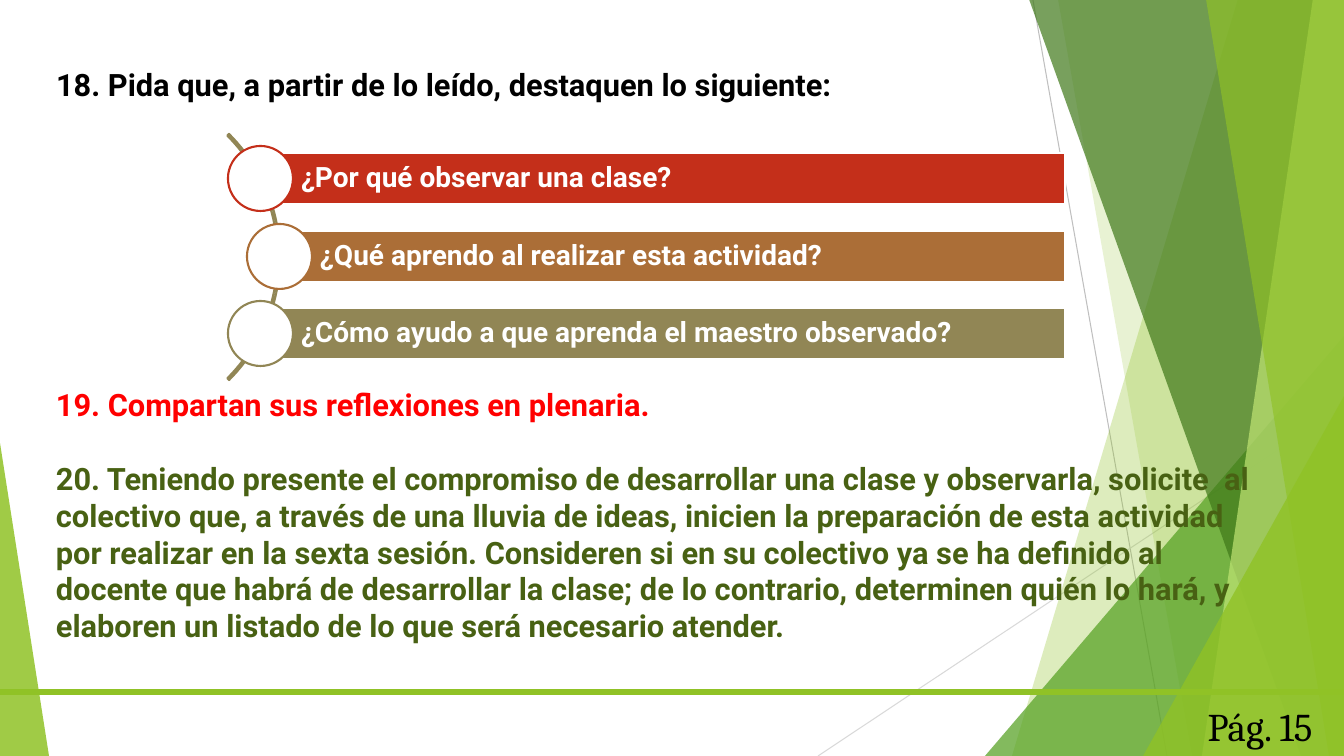
from dataclasses import dataclass
from typing import Optional

from lxml.etree import SubElement
from pptx import Presentation
from pptx.dml.color import RGBColor
from pptx.dml.fill import FillFormat
from pptx.enum.shapes import MSO_CONNECTOR, MSO_SHAPE
from pptx.enum.text import MSO_ANCHOR, MSO_AUTO_SIZE, PP_ALIGN
from pptx.oxml.ns import qn
from pptx.shapes.autoshape import Shape
from pptx.slide import Slide
from pptx.text.text import TextFrame, _Paragraph
from pptx.util import Pt

EMU_PER_PX = 914400 / 100.8
WIDTH, HEIGHT = 1344, 756
GREEN = "90C226"
WHITE = "FFFFFF"
BLACK = "000000"
OLIVE = "918655"


@dataclass
class Ray:
    start: tuple[int, int]
    end: tuple[int, int]
    color: str


@dataclass
class Facet:
    """A translucent band between a slanted left edge and the slide's right side."""
    top_x: int
    bottom_x: int
    color: str
    opacity: int


@dataclass
class Wedge:
    left: int
    top: int
    width: int
    apex: float
    color: str
    opacity: int


@dataclass
class Question:
    text: str
    left: int
    color: str


RAYS = [
    Ray((1033, 0), (1167, HEIGHT), "BFBFBF"),
    Ray((WIDTH, 406), (818, HEIGHT), "D9D9D9"),
]
DECOR = [
    Facet(1238, 1012, GREEN, 30),
    Facet(1058, 1192, GREEN, 20),
    Wedge(985, 336, 359, 1, "54A021", 72),
    Facet(1029, 1301, "3F7819", 70),
    Facet(1313, 1202, "C0E474", 70),
    Facet(1206, 1329, GREEN, 65),
    Wedge(1143, 396, 201, 1, GREEN, 80),
    Wedge(0, 443, 49, 0, GREEN, 85),
]
QUESTIONS = [
    Question("¿Por qué observar una clase?", 260, "C42F1A"),
    Question("¿Qué aprendo al realizar esta actividad?", 279, "AB6E37"),
    Question("¿Cómo ayudo a que aprenda el maestro observado?", 260, OLIVE),
]
BAR_TOP, BAR_HEIGHT, BAR_PITCH, BAR_RIGHT = 153, 51, 77.6, 1065
CIRCLE = 65


def px(value: float) -> int:
    return round(value * EMU_PER_PX)


def rgb(color: str) -> RGBColor:
    return RGBColor.from_string(color)


def paint(fill: FillFormat, color: str, opacity: int = 100) -> None:
    fill.solid()
    fill.fore_color.rgb = rgb(color)
    if opacity < 100:
        clr = fill._xPr.find(qn("a:solidFill")).find(qn("a:srgbClr"))
        SubElement(clr, qn("a:alpha")).set("val", str(opacity * 1000))


def style(shape: Shape, fill: Optional[str], line: Optional[str] = None,
          opacity: int = 100) -> None:
    shape.shadow.inherit = False
    if fill:
        paint(shape.fill, fill, opacity)
    else:
        shape.fill.background()
    if line:
        shape.line.color.rgb = rgb(line)
        shape.line.width = Pt(1.5)
    else:
        shape.line.fill.background()


def add_preset(slide: Slide, preset: MSO_SHAPE, left: int, top: int,
               width: int, height: int) -> Shape:
    return slide.shapes.add_shape(preset, px(left), px(top), px(width), px(height))


def add_run(paragraph: _Paragraph, text: str, size: int, color: str,
            font: str = "Roboto", bold: bool = True) -> None:
    run = paragraph.add_run()
    run.text = text
    run.font.name = font
    run.font.size = Pt(size)
    run.font.bold = bold
    run.font.color.rgb = rgb(color)


def add_text_frame(slide: Slide, left: int, top: int, width: int, height: int,
                   wrap: bool = True) -> TextFrame:
    frame = slide.shapes.add_textbox(px(left), px(top), px(width), px(height)).text_frame
    frame.word_wrap = wrap
    return frame


def draw_ray(slide: Slide, ray: Ray) -> None:
    line = slide.shapes.add_connector(
        MSO_CONNECTOR.STRAIGHT, *map(px, ray.start), *map(px, ray.end))
    line.line.color.rgb = rgb(ray.color)
    line.line.width = Pt(0.75)
    SubElement(line._element.spPr, qn("a:effectLst"))


def draw_facet(slide: Slide, facet: Facet) -> None:
    outline = slide.shapes.build_freeform(facet.top_x, -1, EMU_PER_PX)
    outline.add_line_segments(
        [(WIDTH, -1), (WIDTH, HEIGHT), (facet.bottom_x, HEIGHT)], close=True)
    style(outline.convert_to_shape(), facet.color, opacity=facet.opacity)


def draw_wedge(slide: Slide, wedge: Wedge) -> None:
    triangle = add_preset(slide, MSO_SHAPE.ISOSCELES_TRIANGLE, wedge.left, wedge.top,
                          wedge.width, HEIGHT - wedge.top)
    triangle.adjustments[0] = wedge.apex
    style(triangle, wedge.color, opacity=wedge.opacity)


def draw_question(slide: Slide, question: Question, top: int) -> None:
    bar = add_preset(slide, MSO_SHAPE.RECTANGLE, question.left, top,
                     BAR_RIGHT - question.left, BAR_HEIGHT)
    style(bar, question.color, WHITE)
    frame = bar.text_frame
    frame.word_wrap = True
    frame.vertical_anchor = MSO_ANCHOR.MIDDLE
    frame.margin_left = px(41)
    frame.margin_top = frame.margin_right = frame.margin_bottom = px(6)
    paragraph = frame.paragraphs[0]
    paragraph.alignment = PP_ALIGN.LEFT
    paragraph.line_spacing = 0.9
    add_run(paragraph, question.text, 20, WHITE)

    circle = add_preset(slide, MSO_SHAPE.OVAL, question.left - CIRCLE // 2,
                        top - (CIRCLE - BAR_HEIGHT) // 2, CIRCLE, CIRCLE)
    style(circle, WHITE, question.color)


def write_heading(slide: Slide) -> None:
    heading = slide.shapes.title
    heading.left, heading.top, heading.width, heading.height = map(px, (46, 61, 1248, 52))
    frame = heading.text_frame
    frame.word_wrap = True
    frame.auto_size = MSO_AUTO_SIZE.NONE
    frame.vertical_anchor = MSO_ANCHOR.TOP
    paragraph = frame.paragraphs[0]
    paragraph.alignment = PP_ALIGN.LEFT
    add_run(paragraph, "18. Pida que, a partir de lo leído, destaquen lo siguiente:", 22, BLACK)


def write_instructions(slide: Slide) -> None:
    frame = add_text_frame(slide, 46, 381, 1224, 271)
    add_run(frame.paragraphs[0], "19. Compartan sus reflexiones en plenaria.", 22, "FF0000")
    preparation = frame.add_paragraph()
    preparation.space_before = Pt(26)
    add_run(preparation,
            "20. Teniendo presente el compromiso de desarrollar una clase y observarla, "
            "solicite  al colectivo que, a través de una lluvia de ideas, inicien la "
            "preparación de esta actividad por realizar en la sexta sesión. Consideren si "
            "en su colectivo ya se ha definido al docente que habrá de desarrollar la "
            "clase; de lo contrario, determinen quién lo hará, y elaboren un listado de lo "
            "que será necesario atender.", 22, "486113")


def main() -> None:
    prs = Presentation()
    prs.slide_width, prs.slide_height = px(WIDTH), px(HEIGHT)
    slide = prs.slides.add_slide(prs.slide_layouts[5])

    for ray in RAYS:
        draw_ray(slide, ray)
    for part in DECOR:
        if isinstance(part, Facet):
            draw_facet(slide, part)
        else:
            draw_wedge(slide, part)
    style(add_preset(slide, MSO_SHAPE.RECTANGLE, 0, 689, WIDTH, 6), GREEN)

    page_label = add_text_frame(slide, 1182, 697, 156, 57, wrap=False).paragraphs[0]
    page_label.alignment = PP_ALIGN.CENTER
    add_run(page_label, "Pág. 15", 28, BLACK, "Cambria", bold=False)

    write_heading(slide)
    arc = add_preset(slide, MSO_SHAPE.BLOCK_ARC, -68, 83, 348, 348)
    for index, value in enumerate((189, 27, 0.007)):
        arc.adjustments[index] = value
    style(arc, None, OLIVE)
    for row, question in enumerate(QUESTIONS):
        draw_question(slide, question, round(BAR_TOP + row * BAR_PITCH))
    write_instructions(slide)
    prs.save("out.pptx")


if __name__ == "__main__":
    main()
